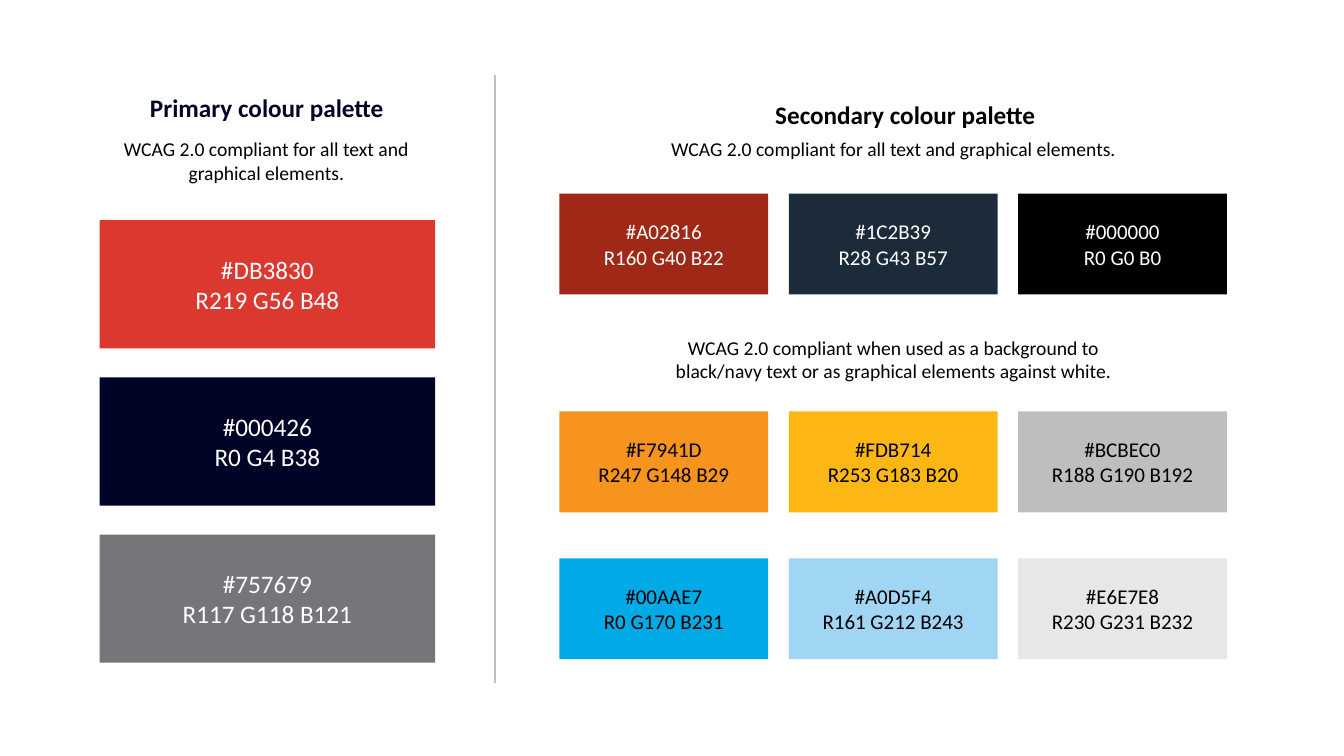
"""Build a slide that shows the primary and secondary colour palettes."""
import pptx
import pptx.dml.color
import pptx.enum.shapes
import pptx.enum.text
import pptx.oxml
import pptx.util

Cm = pptx.util.Cm
FONT = "Calibri"
HEX = {
    "red": "DB3830", "navy": "000426", "grey": "757679",
    "brick": "A02816", "slate": "1C2B39", "black": "000000",
    "orange": "F7941D", "yellow": "FDB714", "silver": "BCBEC0",
    "blue": "00AAE7", "sky": "A0D5F4", "pale": "E6E7E8",
    "title": "000425", "white": "FFFFFF",
}
MAIN = [("red", "R219 G56 B48"), ("navy", "R0 G4 B38"),
        ("grey", "R117 G118 B121")]
ROWS = [
    (4.88, "white", [("brick", "R160 G40 B22"), ("slate", "R28 G43 B57"),
                     ("black", "R0 G0 B0")]),
    (10.37, "black", [("orange", "R247 G148 B29"),
                      ("yellow", "R253 G183 B20"),
                      ("silver", "R188 G190 B192")]),
    (14.07, "black", [("blue", "R0 G170 B231"), ("sky", "R161 G212 B243"),
                      ("pale", "R230 G231 B232")]),
]
CLAIM = "WCAG 2.0 compliant for all text and graphical elements."
USAGE = ("WCAG 2.0 compliant when used as a background to black/navy text "
         "or as graphical elements against white.")


def color(name):
    """Return the named colour."""
    return pptx.dml.color.RGBColor.from_string(HEX[name])


def write(shape, text, size, ink, bold=False):
    """Put centred text in a shape."""
    frame = shape.text_frame
    frame.word_wrap = True
    frame.text = text
    for para in frame.paragraphs:
        para.alignment = pptx.enum.text.PP_ALIGN.CENTER
        for run in para.runs:
            run.font.name = FONT
            run.font.size = pptx.util.Pt(size)
            run.font.bold = bold
            run.font.color.rgb = color(ink)


def label(slide, box, text, size=14, ink="black", bold=False):
    """Add a text box."""
    shape = slide.shapes.add_textbox(*map(Cm, box))
    write(shape, text, size, ink, bold)
    shape.text_frame.auto_size = pptx.enum.text.MSO_AUTO_SIZE.SHAPE_TO_FIT_TEXT


def swatch(slide, box, name, rgb, size, ink):
    """Add a filled block with its colour codes."""
    shape = slide.shapes.add_shape(
        pptx.enum.shapes.MSO_SHAPE.RECTANGLE, *map(Cm, box))
    shape.shadow.inherit = False
    shape.fill.solid()
    shape.fill.fore_color.rgb = color(name)
    shape.line.fill.background()
    write(shape, f"#{HEX[name]}\n{rgb}", size, ink)
    shape.text_frame.vertical_anchor = pptx.enum.text.MSO_ANCHOR.MIDDLE


def divide(slide, x, top, end):
    """Add an upright rule between the palettes."""
    line = slide.shapes.add_connector(
        pptx.enum.shapes.MSO_CONNECTOR.STRAIGHT,
        Cm(x), Cm(top), Cm(x), Cm(end))
    line.line.color.rgb = color("silver")
    line.line.width = pptx.util.Pt(1)
    props = line._element.spPr
    props.append(pptx.oxml.parse_xml(
        '<a:effectLst xmlns:a='
        '"http://schemas.openxmlformats.org/drawingml/2006/main"/>'))


def main():
    """Lay out both palettes and save the deck."""
    deck = pptx.Presentation()
    deck.slide_width, deck.slide_height = Cm(33.87), Cm(19.05)
    slide = deck.slides.add_slide(deck.slide_layouts[6])

    label(slide, (3.45, 2.21, 6.55, 1.02), "Primary colour palette",
          18, "title", True)
    label(slide, (2.51, 3.33, 8.41, 1.45), CLAIM)
    for i, (name, rgb) in enumerate(MAIN):
        swatch(slide, (2.51, 5.55 + i * 3.96, 8.46, 3.23),
               name, rgb, 18, "white")

    divide(slide, 12.47, 1.88, 17.22)

    label(slide, (13.67, 2.39, 18.29, 1.02), "Secondary colour palette",
          18, "black", True)
    label(slide, (14.1, 3.33, 16.84, 0.86), CLAIM)
    label(slide, (16.08, 8.33, 12.88, 1.45), USAGE)
    for top, ink, row in ROWS:
        for i, (name, rgb) in enumerate(row):
            swatch(slide, (14.1 + i * 5.78, top, 5.26, 2.54),
                   name, rgb, 15, ink)

    deck.save("out.pptx")


if __name__ == "__main__":
    main()
